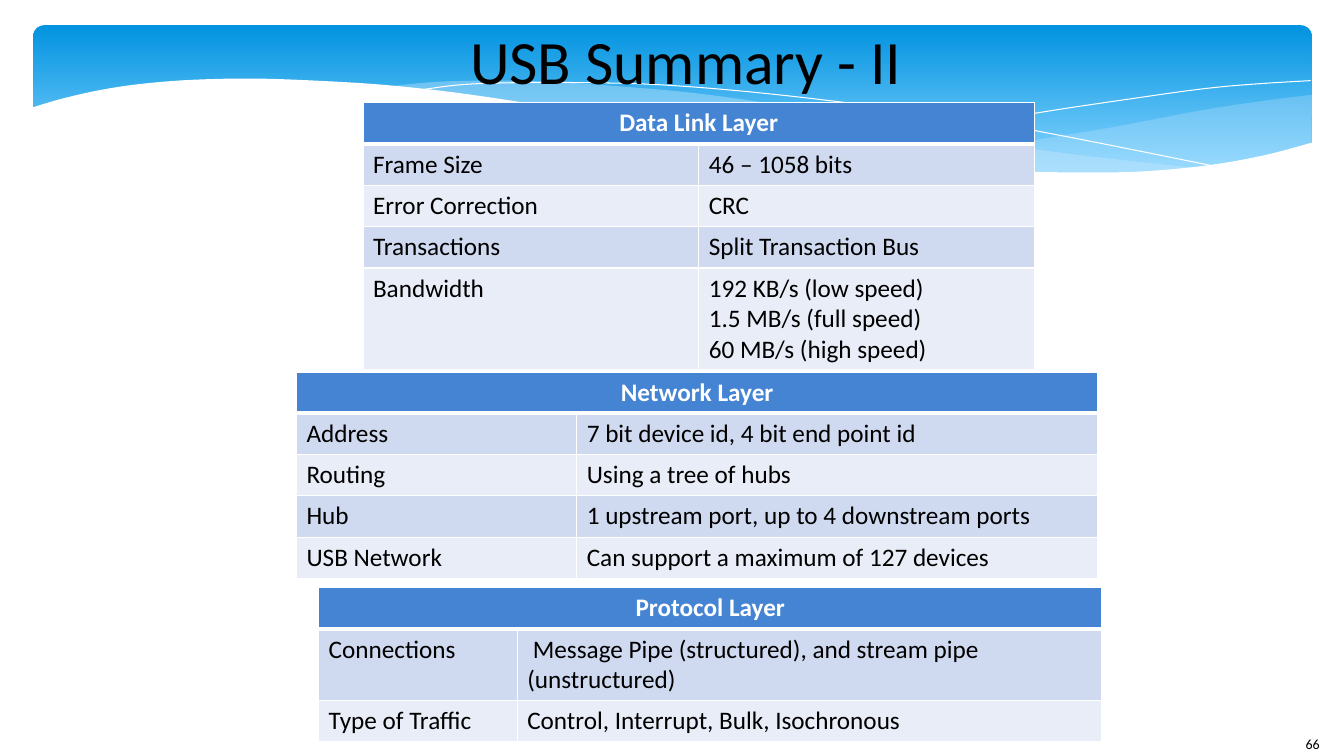
"""Build the USB summary slide: a wave banner, a title and three layer tables."""
from dataclasses import dataclass
from typing import Optional

from lxml.etree import SubElement
from pptx import Presentation
from pptx.dml.color import RGBColor
from pptx.enum.shapes import MSO_SHAPE
from pptx.enum.text import MSO_ANCHOR, PP_ALIGN
from pptx.oxml.ns import qn
from pptx.util import Inches, Pt

COLORS = {
    "sky_top": "0293E0", "sky_bottom": "83D3FE", "foam": "C6E7FC",
    "white": "FFFFFF", "ink": "000000",
    "header": "4584D3", "band_dark": "CFD9EF", "band_light": "E9EDF7",
}
FONT = "Calibri"
ROW_HEIGHT = 0.41
LINE_HEIGHT = 0.3
CURVE_STEPS = 5

Point = tuple[float, float]


@dataclass(frozen=True)
class Wave:
    curves: tuple[tuple[Point, ...], ...]
    fill: Optional[str] = None
    opacity: int = 100


@dataclass(frozen=True)
class LayerTable:
    title: str
    left: float
    top: float
    columns: tuple[float, float]
    rows: tuple[tuple[str, str], ...]
    tall_row: int = 0
    tall_lines: int = 1


WAVES = (
    Wave((
        ((13.01, 0.94), (12.46, 1.01), (11.88, 1.1), (11.1, 1.25), (10.38, 1.37),
         (9.72, 1.47), (8.82, 1.6)),
        ((8.82, 1.6), (9.4, 1.65), (10.09, 1.7), (10.71, 1.72), (11.26, 1.71),
         (11.86, 1.66), (12.38, 1.58), (13.01, 1.42)),
    ), "foam", 29),
    Wave((
        ((11.9, 1.67), (11.16, 1.59), (10.34, 1.49), (9.41, 1.34), (8.39, 1.16),
         (7.59, 1.02), (6.86, 0.92), (6.19, 0.86), (5.6, 0.82), (5.06, 0.8),
         (4.37, 0.81), (3.82, 0.86)),
        ((3.82, 0.86), (4.56, 0.94), (5.39, 1.06), (6.54, 1.26), (7.55, 1.43),
         (8.46, 1.56), (9.26, 1.65), (9.98, 1.7), (10.76, 1.73), (11.31, 1.72),
         (11.9, 1.67)),
    ), "foam", 40),
    Wave((
        ((4.12, 0.9), (4.58, 0.84), (5.16, 0.82), (5.77, 0.82), (6.52, 0.84),
         (7.42, 0.91), (8.48, 1.03), (9.7, 1.2), (10.6, 1.36), (12.1, 1.66)),
    )),
    Wave((
        ((8.18, 1.51), (8.7, 1.41), (9.61, 1.24), (10.35, 1.11), (11.15, 0.99),
         (11.94, 0.88), (12.5, 0.83), (13, 0.8)),
    )),
    Wave((
        ((13.03, 1.41), (12.54, 1.54), (11.98, 1.64), (11.34, 1.7), (10.78, 1.71),
         (10.15, 1.7), (9.44, 1.65), (8.63, 1.56), (7.72, 1.44), (6.71, 1.28),
         (5.96, 1.14), (5.21, 1.02), (4.53, 0.92), (3.9, 0.85), (3.33, 0.81),
         (2.58, 0.78), (1.94, 0.79), (1.42, 0.83), (1.01, 0.89), (0.61, 0.98),
         (0.31, 1.07)),
        ((0.31, 2.24), (13.03, 2.24)),
    ), "white"),
)

LAYERS = (
    LayerTable("Data Link Layer", 3.6, 1.02, (3.33, 3.33), (
        ("Frame Size", "46 – 1058 bits"),
        ("Error Correction", "CRC"),
        ("Transactions", "Split Transaction Bus"),
        ("Bandwidth", "192 KB/s (low speed)\n1.5 MB/s (full speed)\n60 MB/s (high speed)"),
    ), tall_row=4, tall_lines=3),
    LayerTable("Network Layer", 2.94, 3.69, (2.78, 5.17), (
        ("Address", "7 bit device id, 4 bit end point id"),
        ("Routing", "Using a tree of hubs"),
        ("Hub", "1 upstream port, up to 4 downstream ports"),
        ("USB Network", "Can support a maximum of 127 devices"),
    )),
    LayerTable("Protocol Layer", 3.16, 5.83, (1.97, 5.8), (
        ("Connections", " Message Pipe (structured), and stream pipe (unstructured)"),
        ("Type of Traffic", "Control, Interrupt, Bulk, Isochronous"),
    ), tall_row=1, tall_lines=2),
)


def rgb(name: str) -> RGBColor:
    return RGBColor.from_string(COLORS[name])


def smooth(knots: tuple[Point, ...]) -> list[Point]:
    padded = (knots[0], *knots, knots[-1])
    points = [knots[0]]
    for a, b, c, d in zip(padded, padded[1:], padded[2:], padded[3:]):
        for step in range(1, CURVE_STEPS + 1):
            t = step / CURVE_STEPS
            points.append(tuple(
                q + t * ((r - p) + t * ((2 * p - 5 * q + 4 * r - s)
                                        + t * (3 * q - p - 3 * r + s))) / 2
                for p, q, r, s in zip(a, b, c, d)))
    return points


def draw_sky(slide) -> None:
    sky = slide.shapes.add_shape(
        MSO_SHAPE.ROUNDED_RECTANGLE, Inches(0.33), Inches(0.25), Inches(12.68), Inches(1.56))
    sky.adjustments[0] = 0.071
    sky.shadow.inherit = False
    sky.line.fill.background()
    sky.fill.gradient()
    sky.fill.gradient_angle = 270
    for stop, color, position in zip(
            sky.fill.gradient_stops, ("sky_top", "sky_bottom"), (0, 0.9)):
        stop.color.rgb = rgb(color)
        stop.position = position


def draw_wave(slide, wave: Wave) -> None:
    points = [(Inches(x), Inches(y)) for curve in wave.curves for x, y in smooth(curve)]
    builder = slide.shapes.build_freeform(*points[0], scale=1.0)
    builder.add_line_segments(points[1:], close=wave.fill is not None)
    shape = builder.convert_to_shape()
    shape.shadow.inherit = False
    if wave.fill is None:
        shape.fill.background()
        shape.line.color.rgb = rgb("white")
        shape.line.width = Pt(0)
        return
    shape.line.fill.background()
    shape.fill.solid()
    shape.fill.fore_color.rgb = rgb(wave.fill)
    if wave.opacity < 100:
        tint = shape.fill._xPr.find(qn("a:solidFill"))[0]
        SubElement(tint, qn("a:alpha"), val=str(wave.opacity * 1000))


def write(frame, text: str, size: int, color: str = "ink", bold: bool = False,
          align: PP_ALIGN = PP_ALIGN.LEFT) -> None:
    for index, line in enumerate(text.split("\n")):
        paragraph = frame.add_paragraph() if index else frame.paragraphs[0]
        paragraph.alignment = align
        run = paragraph.add_run()
        run.text = line
        run.font.name = FONT
        run.font.size = Pt(size)
        run.font.bold = bold
        run.font.color.rgb = rgb(color)


def style_cell(cell, fill: str, row: int) -> None:
    widths = {"lnL": 1, "lnR": 1, "lnT": 3 if row == 1 else 1, "lnB": 3 if row == 0 else 1}
    properties = cell._tc.get_or_add_tcPr()
    for side, width in widths.items():
        border = SubElement(properties, qn(f"a:{side}"), w=str(Pt(width)))
        SubElement(SubElement(border, qn("a:solidFill")), qn("a:srgbClr"), val=COLORS["white"])
    cell.fill.solid()
    cell.fill.fore_color.rgb = rgb(fill)


def draw_layer(slide, layer: LayerTable) -> None:
    heights = [ROW_HEIGHT] * (len(layer.rows) + 1)
    heights[layer.tall_row] += LINE_HEIGHT * (layer.tall_lines - 1)
    table = slide.shapes.add_table(
        len(heights), 2, Inches(layer.left), Inches(layer.top),
        Inches(sum(layer.columns)), Inches(sum(heights))).table
    for column, width in zip(table.columns, layer.columns):
        column.width = Inches(width)
    for index, height in enumerate(heights):
        table.rows[index].height = Inches(height)
        fill = "header" if index == 0 else "band_dark" if index % 2 else "band_light"
        for cell in table.rows[index].cells:
            style_cell(cell, fill, index)
    table.cell(0, 0).merge(table.cell(0, 1))
    write(table.cell(0, 0).text_frame, layer.title, 18, "white", True, PP_ALIGN.CENTER)
    for index, texts in enumerate(layer.rows, start=1):
        for cell, text in zip(table.rows[index].cells, texts):
            write(cell.text_frame, text, 18)


def main() -> None:
    deck = Presentation()
    deck.slide_width, deck.slide_height = Inches(13.33), Inches(7.5)
    slide = deck.slides.add_slide(deck.slide_layouts[6])
    draw_sky(slide)
    for wave in WAVES:
        draw_wave(slide, wave)
    page_number = slide.shapes.add_textbox(
        Inches(12.85), Inches(7.25), Inches(0.48), Inches(0.25)).text_frame
    write(page_number, "66", 10)
    title = slide.shapes.add_textbox(
        Inches(2.75), Inches(0.08), Inches(8.11), Inches(1.02)).text_frame
    title.word_wrap = True
    title.vertical_anchor = MSO_ANCHOR.MIDDLE
    title.margin_left = title.margin_right = title.margin_top = title.margin_bottom = 0
    write(title, "USB Summary - II", 44, align=PP_ALIGN.CENTER)
    for layer in LAYERS:
        draw_layer(slide, layer)
    deck.save("out.pptx")


if __name__ == "__main__":
    main()
